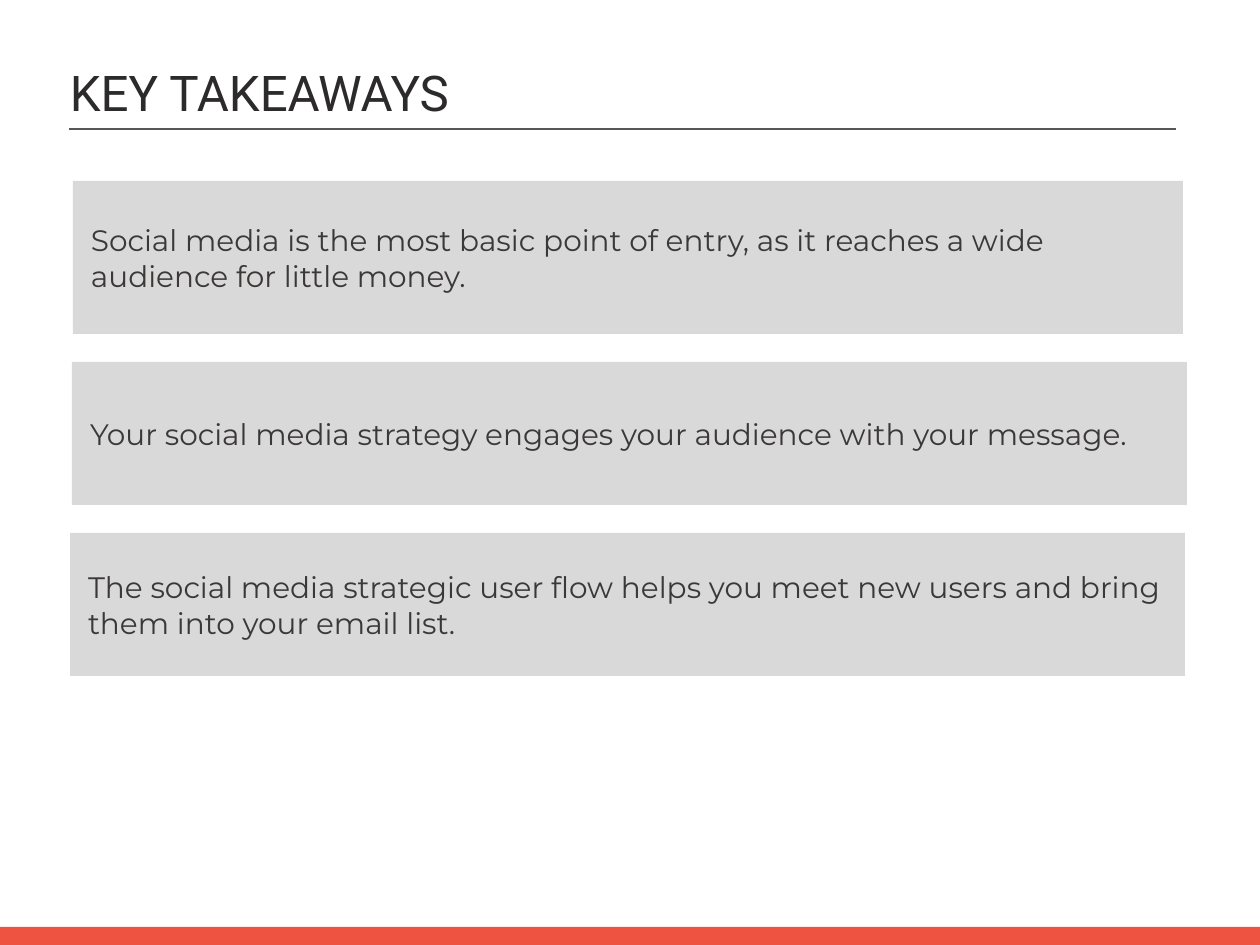
from dataclasses import dataclass

from lxml import etree
from pptx import Presentation
from pptx.dml.color import RGBColor
from pptx.enum.shapes import MSO_CONNECTOR, MSO_SHAPE
from pptx.enum.text import MSO_ANCHOR, MSO_AUTO_SIZE, PP_ALIGN
from pptx.oxml.ns import qn
from pptx.util import Pt

RECTANGLE = MSO_SHAPE.RECTANGLE
STRAIGHT = MSO_CONNECTOR.STRAIGHT
MIDDLE = MSO_ANCHOR.MIDDLE
NO_AUTOFIT = MSO_AUTO_SIZE.NONE
LEFT = PP_ALIGN.LEFT

EMU_PER_PX = 10320
SLIDE_WIDTH, SLIDE_HEIGHT = 1260, 945
LEAD_TITLE = "KEY TAKEAWAYS"

# Each card: box in px (left, top, width, height) and its text
TAKEAWAYS = [
    ((73, 181, 1110, 153),
     "Social media is the most basic point of entry, as it reaches a wide "
     "audience for little money."),
    ((72, 362, 1115, 143),
     "Your social media strategy engages your audience with your message."),
    ((70, 533, 1115, 143),
     "The social media strategic user flow helps you meet new users and bring "
     "them into your email list."),
]


@dataclass(frozen=True)
class Theme:
    title_font: str = "Roboto"
    body_font: str = "Montserrat"
    title_size: int = 40
    body_size: int = 24
    title_color: str = "2C2A2A"
    body_color: str = "3B3838"
    card_color: str = "D9D9D9"
    rule_color: str = "56565A"
    footer_color: str = "ED5340"


THEME = Theme()


def px(length):
    return length * EMU_PER_PX


def box_px(*lengths):
    return [px(length) for length in lengths]


def write_text(shape, text, font_name, size, color):
    frame = shape.text_frame
    frame.text = text
    frame.word_wrap = True
    frame.auto_size = NO_AUTOFIT
    frame.vertical_anchor = MIDDLE
    paragraph = frame.paragraphs[0]
    paragraph.alignment = LEFT
    paragraph.font.name = font_name
    paragraph.font.size = Pt(size)
    paragraph.font.color.rgb = RGBColor.from_string(color)


def add_block(slide, box, color):
    shape = slide.shapes.add_shape(RECTANGLE, *box_px(*box))
    shape.shadow.inherit = False
    shape.fill.solid()
    shape.fill.fore_color.rgb = RGBColor.from_string(color)
    shape.line.fill.background()
    return shape


def add_card(slide, box, text):
    card = add_block(slide, box, THEME.card_color)
    frame = card.text_frame
    frame.margin_left = frame.margin_right = px(18)
    write_text(card, text, THEME.body_font, THEME.body_size, THEME.body_color)


def set_title(slide, box, text):
    title = slide.shapes.title
    title.left, title.top, title.width, title.height = box_px(*box)
    write_text(title, text, THEME.title_font, THEME.title_size, THEME.title_color)


def add_rule(slide, left, right, top):
    rule = slide.shapes.add_connector(STRAIGHT, *box_px(left, top, right, top))
    rule.line.color.rgb = RGBColor.from_string(THEME.rule_color)
    rule.line.width = Pt(1)
    etree.SubElement(rule._element.spPr, qn("a:effectLst"))


def main():
    presentation = Presentation()
    presentation.slide_width = px(SLIDE_WIDTH)
    presentation.slide_height = px(SLIDE_HEIGHT)
    title_only = presentation.slide_layouts[5]
    slide = presentation.slides.add_slide(title_only)

    # Footer band
    add_block(slide, (0, 927, SLIDE_WIDTH, 18), THEME.footer_color)

    # Heading with its rule
    set_title(slide, (61, 60, 1132, 64), LEAD_TITLE)
    add_rule(slide, 69, 1176, 129)

    # Takeaway cards
    for box, text in TAKEAWAYS:
        add_card(slide, box, text)

    presentation.save("out.pptx")


if __name__ == "__main__":
    main()
